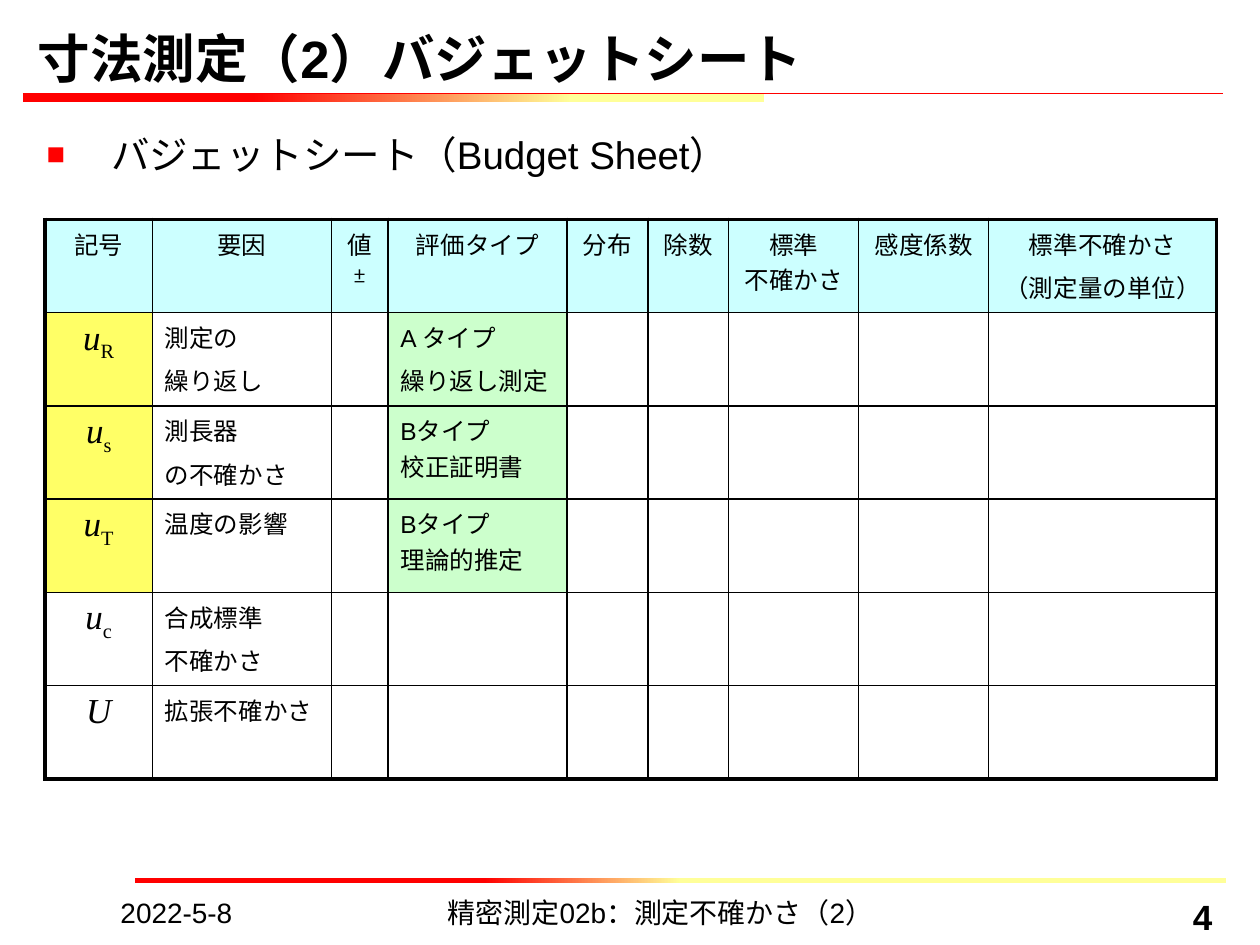
from dataclasses import dataclass

from lxml.etree import SubElement
from pptx import Presentation
from pptx.dml.color import RGBColor
from pptx.enum.shapes import MSO_CONNECTOR, MSO_SHAPE
from pptx.enum.text import MSO_ANCHOR as Anchor, MSO_AUTO_SIZE as AutoSize, PP_ALIGN as Align
from pptx.oxml.ns import qn
from pptx.util import Cm, Pt

COLORS = {
    "black": "000000", "white": "FFFFFF", "red": "FF0000", "pale_yellow": "FFFF99",
    "header": "CCFFFF", "symbol": "FFFF66", "evaluation": "CCFFCC",
}
COLUMN_WIDTHS = [2.16, 3.61, 1.14, 3.61, 1.63, 1.63, 2.62, 2.62, 4.6]
ROW_HEIGHT = 1.88
THICK, THIN = 2.25, 1


@dataclass
class Run:
    text: str
    size: int = 14
    font: str = "Arial"
    bold: bool = False
    italic: bool = False
    baseline: int = 0


@dataclass
class Source:
    symbol: str
    subscript: str
    factor: list[str]
    evaluation: list[str]
    symbol_fill: str = "white"
    evaluation_fill: str = "white"


@dataclass
class Footer:
    left: float
    width: float
    run: Run
    align: Align


HEADERS = [
    ["記号"], ["要因"], ["値\n"], ["評価タイプ"], ["分布"], ["除数"],
    ["標準\n不確かさ"], ["感度係数"], ["標準不確かさ", "（測定量の単位）"],
]
SOURCES = [
    Source("u", "R", ["測定の", "繰り返し"], ["A タイプ", "繰り返し測定"], "symbol", "evaluation"),
    Source("u", "s", ["測長器", "の不確かさ"], ["Bタイプ\n校正証明書"], "symbol", "evaluation"),
    Source("u", "T", ["温度の影響"], ["Bタイプ\n理論的推定"], "symbol", "evaluation"),
    Source("u", "c", ["合成標準", "不確かさ"], []),
    Source("U", "", ["拡張不確かさ"], []),
]
FOOTERS = [
    Footer(2.18, 5.51, Run("2022-5-8", 16), Align.LEFT),
    Footer(6.71, 13.21, Run("精密測定02b：測定不確かさ（2）", 16), Align.CENTER),
    Footer(20.5, 4.19, Run("4", 20, bold=True), Align.RIGHT),
]


def color(name: str) -> RGBColor:
    return RGBColor.from_string(COLORS[name])


def add_run(paragraph, run: Run) -> None:
    for index, line in enumerate(run.text.split("\n")):
        if index:
            paragraph.add_line_break()
        if not line:
            continue
        piece = paragraph.add_run()
        piece.text = line
        font = piece.font
        font.name, font.size = run.font, Pt(run.size)
        font.bold, font.italic = run.bold, run.italic
        font.color.rgb = color("black")
        if run.baseline:
            font._element.set("baseline", str(run.baseline * 1000))


def write(frame, paragraphs: list[list[Run]], align: Align = Align.LEFT) -> None:
    for index, runs in enumerate(paragraphs):
        paragraph = frame.add_paragraph() if index else frame.paragraphs[0]
        paragraph.alignment = align
        if index:
            paragraph.space_before = Pt(4.5)
        for run in runs:
            add_run(paragraph, run)


def add_text_box(slide, left: float, top: float, width: float, height: float):
    frame = slide.shapes.add_textbox(Cm(left), Cm(top), Cm(width), Cm(height)).text_frame
    frame.word_wrap = True
    return frame


def add_bar(slide, left: float, top: float, width: float, height: float,
            yellow_stop: float, red_stop: float) -> None:
    bar = slide.shapes.add_shape(MSO_SHAPE.RECTANGLE, Cm(left), Cm(top), Cm(width), Cm(height))
    bar.shadow.inherit = False
    bar.line.fill.background()
    bar.fill.gradient()
    bar.fill.gradient_angle = 180
    stops = zip(bar.fill.gradient_stops, ("pale_yellow", "red"), (yellow_stop, red_stop))
    for stop, name, position in stops:
        stop.color.rgb = color(name)
        stop.position = position


def add_rule(slide, left: float, right: float, top: float) -> None:
    rule = slide.shapes.add_connector(
        MSO_CONNECTOR.STRAIGHT, Cm(left), Cm(top), Cm(right), Cm(top))
    rule.line.color.rgb = color("red")
    rule.line.width = Pt(0.75)
    SubElement(rule._element.spPr, qn("a:effectLst"))


def set_borders(cell, widths: dict[str, float]) -> None:
    properties = cell._tc.get_or_add_tcPr()
    for side, width in widths.items():
        border = SubElement(properties, qn(f"a:ln{side}"), w=str(int(Pt(width))))
        fill = SubElement(border, qn("a:solidFill"))
        SubElement(fill, qn("a:srgbClr"), val=COLORS["black"])


def plain(texts: list[str]) -> list[list[Run]]:
    return [[Run(text)] for text in texts]


def symbol_runs(source: Source) -> list[Run]:
    runs = [Run(source.symbol, 20, "Times New Roman", italic=True)]
    if source.subscript:
        runs.append(Run(source.subscript, 20, "Times New Roman", baseline=-25))
    return runs


def add_budget_table(slide) -> None:
    row_count, column_count = len(SOURCES) + 1, len(COLUMN_WIDTHS)
    table = slide.shapes.add_table(
        row_count, column_count, Cm(0.91), Cm(4.42),
        Cm(sum(COLUMN_WIDTHS)), Cm(ROW_HEIGHT * row_count)).table
    table.first_row = table.horz_banding = False
    for column, width in zip(table.columns, COLUMN_WIDTHS):
        column.width = Cm(width)
    for row in table.rows:
        row.height = Cm(ROW_HEIGHT)

    for row in range(row_count):
        for column in range(column_count):
            cell = table.cell(row, column)
            set_borders(cell, {
                "L": THIN if column else THICK,
                "R": THICK if column == column_count - 1 else THIN,
                "T": THIN if row else THICK,
                "B": THICK if row == row_count - 1 else THIN,
            })
            cell.fill.solid()
            cell.fill.fore_color.rgb = color("white" if row else "header")

    for column, texts in enumerate(HEADERS):
        paragraphs = plain(texts)
        if column == 2:
            paragraphs[0].append(Run("±", font="Cambria"))
        write(table.cell(0, column).text_frame, paragraphs, Align.CENTER)
    for row, source in enumerate(SOURCES, start=1):
        symbol, factor, evaluation = (table.cell(row, column) for column in (0, 1, 3))
        write(symbol.text_frame, [symbol_runs(source)], Align.CENTER)
        write(factor.text_frame, plain(source.factor))
        write(evaluation.text_frame, plain(source.evaluation))
        symbol.fill.fore_color.rgb = color(source.symbol_fill)
        evaluation.fill.fore_color.rgb = color(source.evaluation_fill)


def add_title(slide) -> None:
    title = slide.shapes.title
    title.left, title.top, title.width, title.height = Cm(0.51), Cm(0.53), Cm(24.2), Cm(1.27)
    frame = title.text_frame
    frame.auto_size = AutoSize.NONE
    frame.vertical_anchor = Anchor.BOTTOM
    frame.margin_top = frame.margin_bottom = 0
    write(frame, [[Run("寸法測定（2）バジェットシート", 30, bold=True)]])


def add_body(slide) -> None:
    frame = add_text_box(slide, 0.69, 2.51, 24, 15)
    properties = frame.paragraphs[0]._p.get_or_add_pPr()
    properties.set("marL", str(Cm(1.3)))
    properties.set("indent", str(-Cm(1.3)))
    bullet_color = SubElement(properties, qn("a:buClr"))
    SubElement(bullet_color, qn("a:srgbClr"), val=COLORS["red"])
    SubElement(properties, qn("a:buSzPct"), val="80000")
    SubElement(properties, qn("a:buFont"), typeface="Arial")
    SubElement(properties, qn("a:buChar"), char="■")
    write(frame, [[Run("バジェットシート（Budget Sheet）", 22)]])


def main() -> None:
    presentation = Presentation()
    presentation.slide_width, presentation.slide_height = Cm(25.4), Cm(19.05)
    slide = presentation.slides.add_slide(presentation.slide_layouts[5])
    add_bar(slide, 2.72, 17.7, 22, 0.1, 0.5, 0.68)
    add_bar(slide, 0.46, 1.88, 14.95, 0.18, 0.26, 0.69)
    add_rule(slide, 0.46, 24.66, 1.88)
    add_title(slide)
    add_body(slide)
    for footer in FOOTERS:
        frame = add_text_box(slide, footer.left, 17.93, footer.width, 0.74)
        write(frame, [[footer.run]], footer.align)
    add_budget_table(slide)
    presentation.save("out.pptx")


if __name__ == "__main__":
    main()
